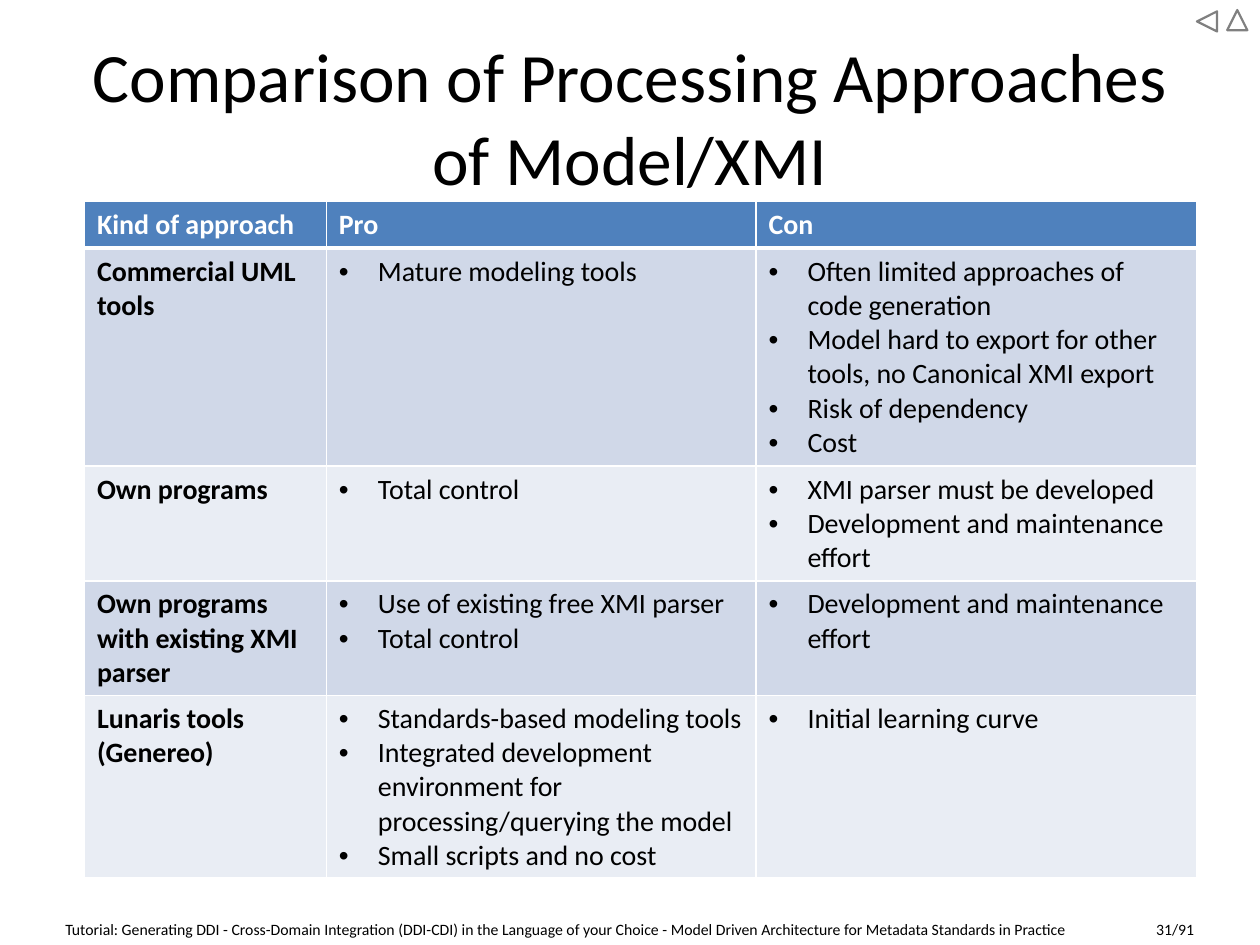
import pptx
import pptx.dml.color
import pptx.enum.shapes
import pptx.enum.text
import pptx.oxml
import pptx.oxml.ns
import pptx.util

Inches = pptx.util.Inches
Pt = pptx.util.Pt
qn = pptx.oxml.ns.qn
NAMESPACE = pptx.oxml.ns.nsdecls("a")

TITLE = "Comparison of Processing Approaches of Model/XMI"
FOOTER = ("Tutorial: Generating DDI - Cross-Domain Integration (DDI-CDI) in the Language "
          "of your Choice - Model Driven Architecture for Metadata Standards in Practice")
PAGE = "31/91"
HEADINGS = ["Kind of approach", "Pro", "Con"]
APPROACHES = [
    ("Commercial UML tools",
     ["Mature modeling tools"],
     ["Often limited approaches of code generation",
      "Model hard to export for other tools, no Canonical XMI export",
      "Risk of dependency",
      "Cost"]),
    ("Own programs",
     ["Total control"],
     ["XMI parser must be developed", "Development and maintenance effort"]),
    ("Own programs with existing XMI parser",
     ["Use of existing free XMI parser", "Total control"],
     ["Development and maintenance effort"]),
    ("Lunaris tools (Genereo)",
     ["Standards-based modeling tools",
      "Integrated development environment for processing/querying the model",
      "Small scripts and no cost"],
     ["Initial learning curve"]),
]
COLUMN_WIDTHS = [1.92, 3.41, 3.5]
ROW_HEIGHTS = [0.37, 1.73, 0.91, 0.91, 1.45]
HEADER_FILL = "4F81BD"
BAND_FILLS = ["D0D8E8", "E9EDF4"]


def color(value):
    return pptx.dml.color.RGBColor.from_string(value)


def write(frame, lines, size=16, ink="000000", bold=False, align=None, bullet=False):
    for index, line in enumerate(lines):
        paragraph = frame.paragraphs[0] if index == 0 else frame.add_paragraph()
        if align is not None:
            paragraph.alignment = align
        run = paragraph.add_run()
        run.text = line
        run.font.name = "Calibri"
        run.font.size = Pt(size)
        run.font.bold = bold
        run.font.color.rgb = color(ink)
        if bullet:
            properties = paragraph._p.get_or_add_pPr()
            properties.set("marL", str(Inches(0.31)))
            properties.set("indent", str(Inches(-0.31)))
            for markup in ('buFont {} typeface="Arial"', 'buChar {} char="•"'):
                properties.append(pptx.oxml.parse_xml(f"<a:{markup.format(NAMESPACE)}/>"))


def add_title(slide, left, top, width, height):
    title = slide.shapes.title
    title.left, title.top = Inches(left), Inches(top)
    title.width, title.height = Inches(width), Inches(height)
    frame = title.text_frame
    frame.word_wrap = True
    frame.auto_size = pptx.enum.text.MSO_AUTO_SIZE.NONE
    frame.vertical_anchor = pptx.enum.text.MSO_ANCHOR.MIDDLE
    write(frame, [TITLE], size=39.6, align=pptx.enum.text.PP_ALIGN.CENTER)


def add_footer(slide, left, top, width, height):
    footer = slide.shapes.add_textbox(Inches(left), Inches(top), Inches(width), Inches(height))
    frame = footer.text_frame
    frame.word_wrap = True
    frame.vertical_anchor = pptx.enum.text.MSO_ANCHOR.MIDDLE
    write(frame, [f"{FOOTER}\t{PAGE}"], size=9)
    page_stop = Inches(width - 0.28)
    frame.paragraphs[0]._p.get_or_add_pPr().append(pptx.oxml.parse_xml(
        f'<a:tabLst {NAMESPACE}><a:tab pos="{page_stop}" algn="r"/></a:tabLst>'))


def add_navigation(slide, left, top, size=0.16):
    for offset_x, offset_y, rotation in ((0, 0.01, 270), (0.24, 0, 0)):
        arrow = slide.shapes.add_shape(
            pptx.enum.shapes.MSO_SHAPE.ISOSCELES_TRIANGLE,
            Inches(left + offset_x), Inches(top + offset_y), Inches(size), Inches(size))
        arrow.rotation = rotation
        arrow.shadow.inherit = False
        arrow.fill.background()
        arrow.line.color.rgb = color("808080")
        arrow.line.width = Pt(1.25)


def format_cell(cell, fill, top_border=1, bottom_border=1):
    cell.fill.solid()
    cell.fill.fore_color.rgb = color(fill)
    borders = {"lnL": 1, "lnR": 1, "lnT": top_border, "lnB": bottom_border}
    for position, (side, width) in enumerate(borders.items()):
        cell._tc.get_or_add_tcPr().insert(position, pptx.oxml.parse_xml(
            f'<a:{side} {NAMESPACE} w="{Pt(width)}"><a:solidFill>'
            f'<a:srgbClr val="FFFFFF"/></a:solidFill></a:{side}>'))


def add_comparison(slide, left, top):
    comparison = slide.shapes.add_table(
        len(ROW_HEIGHTS), len(COLUMN_WIDTHS), Inches(left), Inches(top),
        Inches(sum(COLUMN_WIDTHS)), Inches(sum(ROW_HEIGHTS))).table
    for column, width in zip(comparison.columns, COLUMN_WIDTHS):
        column.width = Inches(width)
    for row, height in zip(comparison.rows, ROW_HEIGHTS):
        row.height = Inches(height)
    for column, heading in enumerate(HEADINGS):
        cell = comparison.cell(0, column)
        format_cell(cell, HEADER_FILL, bottom_border=3)
        write(cell.text_frame, [heading], ink="FFFFFF", bold=True)
    for row, (approach, pros, cons) in enumerate(APPROACHES, start=1):
        for column, lines in enumerate(([approach], pros, cons)):
            cell = comparison.cell(row, column)
            format_cell(cell, BAND_FILLS[(row - 1) % 2], top_border=3 if row == 1 else 1)
            write(cell.text_frame, lines, bold=column == 0, bullet=column > 0)


def main():
    presentation = pptx.Presentation()
    presentation.slide_width = Inches(10)
    presentation.slide_height = Inches(7.5)
    slide = presentation.slides.add_slide(presentation.slide_layouts[5])
    add_footer(slide, 0.42, 7.25, 9.24, 0.25)
    add_navigation(slide, 9.5, 0.08)
    add_title(slide, 0.5, 0.3, 9, 1.25)
    add_comparison(slide, 0.67, 1.6)
    presentation.save("out.pptx")


if __name__ == "__main__":
    main()
